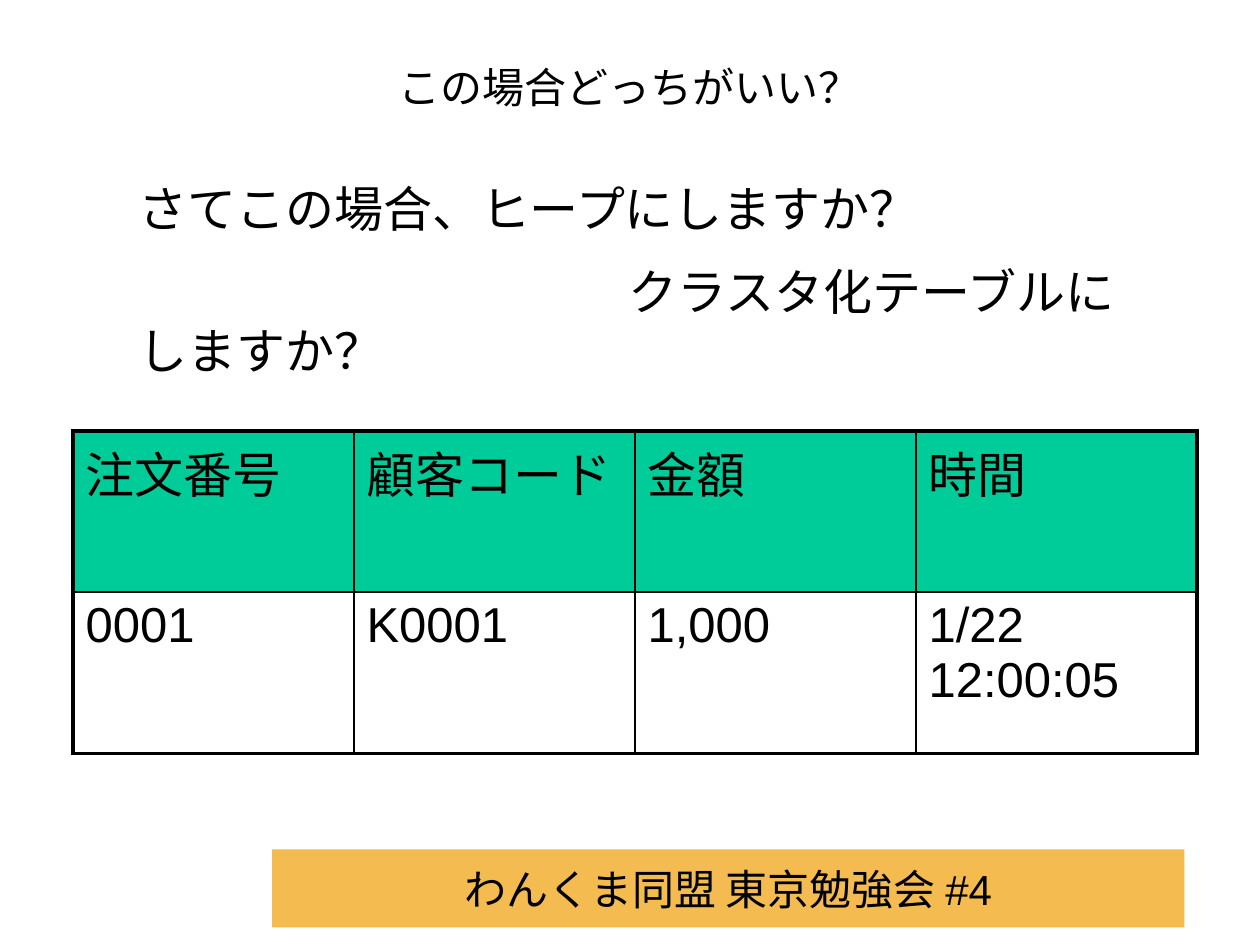
from pptx import Presentation
from pptx.dml.color import RGBColor
from pptx.enum.shapes import MSO_SHAPE
from pptx.enum.text import MSO_ANCHOR, PP_ALIGN
from pptx.oxml.ns import qn
from pptx.util import Inches, Pt
from lxml.etree import SubElement

COLORS = {"text": "000000", "header": "00CC99", "cell": "FFFFFF", "footer": "F3BB50"}
ORDERS = [
    ["注文番号", "顧客コード", "金額", "時間"],
    ["0001", "K0001", "1,000", "1/22 12:00:05"],
]
QUESTIONS = ["さてこの場合、ヒープにしますか？", "クラスタ化テーブルにしますか？"]
BODY_SIZE = 28
INDENT_CHARACTERS = 10


def color(name):
    return RGBColor.from_string(COLORS[name])


def place(shape, left, top, width, height):
    shape.left, shape.top = Inches(left), Inches(top)
    shape.width, shape.height = Inches(width), Inches(height)


def format_paragraph(paragraph, size, alignment=PP_ALIGN.LEFT):
    paragraph.alignment = alignment
    paragraph.font.name = "Arial"
    paragraph.font.size = Pt(size)
    paragraph.font.color.rgb = color("text")


def add_footer(slide):
    footer = slide.shapes.add_shape(
        MSO_SHAPE.RECTANGLE, Inches(2.16), Inches(6.74), Inches(7.24), Inches(0.62))
    footer.shadow.inherit = False
    footer.fill.solid()
    footer.fill.fore_color.rgb = color("footer")
    footer.line.fill.background()
    footer.text_frame.text = "わんくま同盟 東京勉強会 #4"
    footer.text_frame.vertical_anchor = MSO_ANCHOR.MIDDLE
    format_paragraph(footer.text_frame.paragraphs[0], 24, PP_ALIGN.CENTER)


def set_title(slide):
    title = slide.shapes.title
    place(title, 0.5, 0.3, 9, 0.77)
    title.text_frame.text = "この場合どっちがいい？"
    title.text_frame.vertical_anchor = MSO_ANCHOR.MIDDLE
    format_paragraph(title.text_frame.paragraphs[0], 24, PP_ALIGN.CENTER)


def set_questions(slide):
    """Fill the body; the second question starts under the choice in the first."""
    body = slide.placeholders[1]
    place(body, 1, 1.33, 8.17, 1.27)
    frame = body.text_frame
    frame.text = "\n".join(QUESTIONS)
    frame.margin_top = Inches(0.09)
    frame.vertical_anchor = MSO_ANCHOR.TOP
    for index, paragraph in enumerate(frame.paragraphs):
        properties = paragraph._p.get_or_add_pPr()
        properties.set("marL", "0")
        properties.set("indent", str(Pt(index * INDENT_CHARACTERS * BODY_SIZE)))
        SubElement(properties, qn("a:buNone"))
        paragraph.line_spacing = Pt(33.5)
        paragraph.space_before = Pt(index * BODY_SIZE / 2)
        format_paragraph(paragraph, BODY_SIZE)


def set_borders(cell, widths):
    """Draw the left, right, top and bottom borders with the given point widths."""
    properties = cell._tc.get_or_add_tcPr()
    for position, (side, width) in enumerate(zip("LRTB", widths)):
        line = SubElement(properties, qn(f"a:ln{side}"), w=str(Pt(width)))
        fill = SubElement(line, qn("a:solidFill"))
        SubElement(fill, qn("a:srgbClr"), val=COLORS["text"])
        properties.remove(line)
        properties.insert(position, line)


def add_order_table(slide):
    row_count, column_count = len(ORDERS), len(ORDERS[0])
    table = slide.shapes.add_table(
        row_count, column_count,
        Inches(0.58), Inches(3.42), Inches(8.92), Inches(2.56)).table
    table.first_row = table.horz_banding = False
    for row, values in enumerate(ORDERS):
        for column, value in enumerate(values):
            cell = table.cell(row, column)
            cell.text = value
            cell.fill.solid()
            cell.fill.fore_color.rgb = color("cell" if row else "header")
            format_paragraph(cell.text_frame.paragraphs[0], BODY_SIZE)
            outer = (column == 0, column == column_count - 1,
                     row == 0, row == row_count - 1)
            set_borders(cell, [2.25 if edge else 1 for edge in outer])


def main():
    presentation = Presentation()
    presentation.slide_width, presentation.slide_height = Inches(10), Inches(7.5)
    slide = presentation.slides.add_slide(presentation.slide_layouts[1])
    add_footer(slide)
    set_title(slide)
    set_questions(slide)
    add_order_table(slide)
    presentation.save("out.pptx")


if __name__ == "__main__":
    main()
